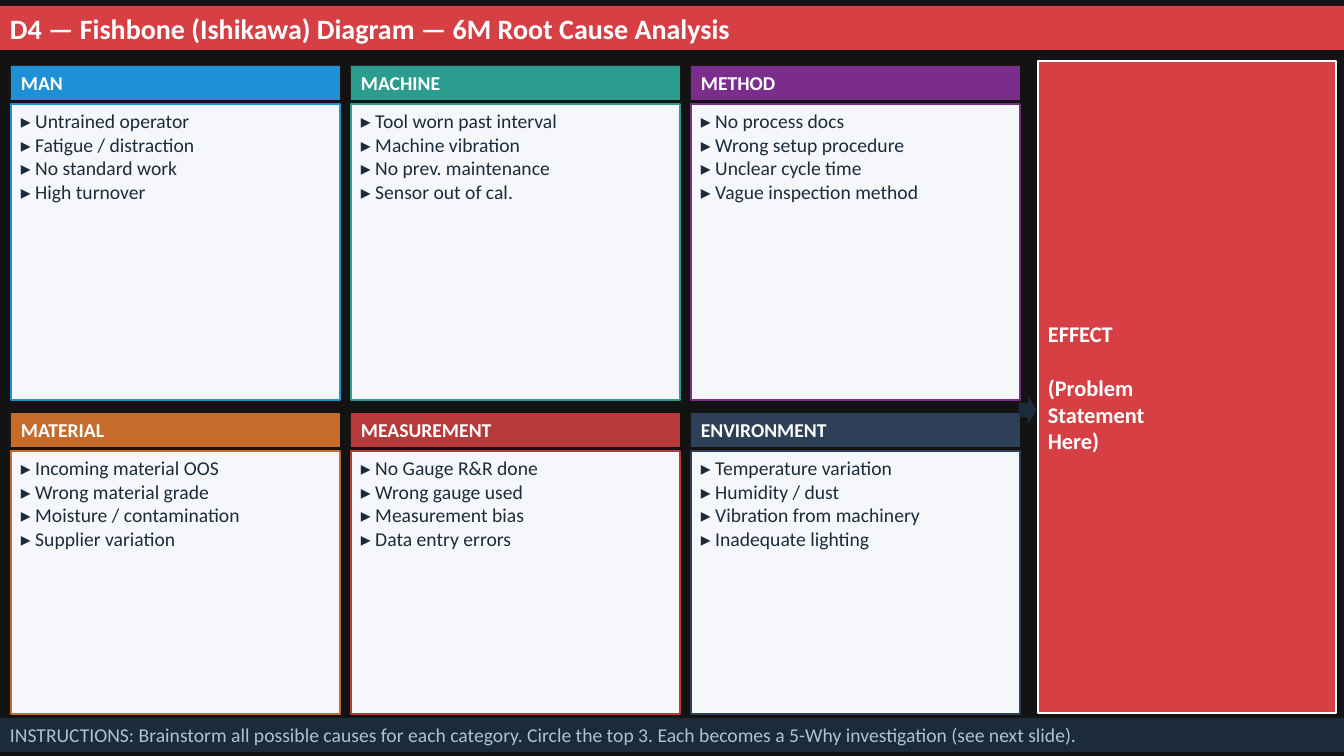
from pptx import Presentation
from pptx.dml.color import RGBColor
from pptx.enum.shapes import MSO_SHAPE as Shape
from pptx.enum.text import MSO_ANCHOR as Anchor, PP_ALIGN as Align
from pptx.util import Pt

# Content
TITLE = "D4 — Fishbone (Ishikawa) Diagram — 6M Root Cause Analysis"
CATEGORIES = [
    ("MAN", "blue", ["Untrained operator", "Fatigue / distraction",
                     "No standard work", "High turnover"]),
    ("MACHINE", "teal", ["Tool worn past interval", "Machine vibration",
                         "No prev. maintenance", "Sensor out of cal."]),
    ("METHOD", "purple", ["No process docs", "Wrong setup procedure",
                          "Unclear cycle time", "Vague inspection method"]),
    ("MATERIAL", "orange", ["Incoming material OOS", "Wrong material grade",
                            "Moisture / contamination", "Supplier variation"]),
    ("MEASUREMENT", "brick", ["No Gauge R&R done", "Wrong gauge used",
                              "Measurement bias", "Data entry errors"]),
    ("ENVIRONMENT", "slate", ["Temperature variation", "Humidity / dust",
                              "Vibration from machinery", "Inadequate lighting"]),
]
EFFECT_HEAD = ["EFFECT"]
EFFECT_NOTE = ["(Problem", "Statement", "Here)"]
INSTRUCTIONS = ("INSTRUCTIONS: Brainstorm all possible causes for each category. "
                "Circle the top 3. Each becomes a 5-Why investigation (see next slide).")

COLORS = {
    "back": "131313", "red": "D64045", "white": "FFFFFF", "paper": "F5F7FA",
    "ink": "1C2B3A", "pale": "A8C4D8", "blue": "1E91D6", "teal": "2A9D8F",
    "purple": "7B2D8B", "orange": "C76B2A", "brick": "B73A3A", "slate": "2E4057",
}
FONT = "Calibri"

# Layout in px
EMU_PER_PX = 914400 / 100.8
WIDTH, HEIGHT = 1344, 756
COLUMNS, CARD_LEFT, CARD_WIDTH, CARD_STEP = 3, 11, 329, 340
HEAD_HEIGHT, BODY_OFFSET = 34, 38
ROWS = [(66, 296), (413, 263)]  # header top, body height


def px(value):
    return round(value * EMU_PER_PX)


def color(name):
    return RGBColor.from_string(COLORS[name])


def add_box(page, place, fill, line=None, weight=1, kind=Shape.RECTANGLE):
    box = page.shapes.add_shape(kind, *map(px, place))
    box.shadow.inherit = False
    box.fill.solid()
    box.fill.fore_color.rgb = color(fill)
    if line:
        box.line.color.rgb = color(line)
        box.line.width = Pt(weight)
    else:
        box.line.fill.background()
    return box


def write(box, lines, size, ink, bold=False, anchor=Anchor.MIDDLE):
    frame = box.text_frame
    frame.word_wrap = True
    frame.vertical_anchor = anchor
    for number, line in enumerate(lines):
        para = frame.add_paragraph() if number else frame.paragraphs[0]
        para.alignment = Align.LEFT
        span = para.add_run()
        span.text = line
        span.font.name = FONT
        span.font.size = Pt(size)
        span.font.bold = bold
        span.font.color.rgb = color(ink)


def main():
    deck = Presentation()
    deck.slide_width, deck.slide_height = px(WIDTH), px(HEIGHT)
    page = deck.slides.add_slide(deck.slide_layouts[6])
    page.background.fill.solid()
    page.background.fill.fore_color.rgb = color("back")

    # Title bar
    write(add_box(page, (0, 6, WIDTH, 44), "red"), [TITLE], 20, "white", True)

    # Cause cards
    for number, (name, tint, causes) in enumerate(CATEGORIES):
        row, column = divmod(number, COLUMNS)
        left = CARD_LEFT + column * CARD_STEP
        top, body_height = ROWS[row]
        head = add_box(page, (left, top, CARD_WIDTH, HEAD_HEIGHT), tint)
        write(head, [name], 14, "white", True)
        body = add_box(page, (left, top + BODY_OFFSET, CARD_WIDTH, body_height),
                       "paper", tint)
        write(body, [f"▸ {cause}" for cause in causes], 14, "ink", anchor=Anchor.TOP)

    # Effect panel and arrow
    effect = add_box(page, (1038, 61, 298, 652), "red", "white", 2)
    write(effect, EFFECT_HEAD + EFFECT_NOTE, 16, "white", True)
    effect.text_frame.paragraphs[len(EFFECT_HEAD)].space_before = Pt(19.5)
    add_box(page, (1019, 396, 18, 28), "ink", kind=Shape.RIGHT_ARROW)

    # Instructions bar
    write(add_box(page, (0, 718, WIDTH, 34), "ink"), [INSTRUCTIONS], 14, "pale")

    deck.save("out.pptx")


if __name__ == "__main__":
    main()
